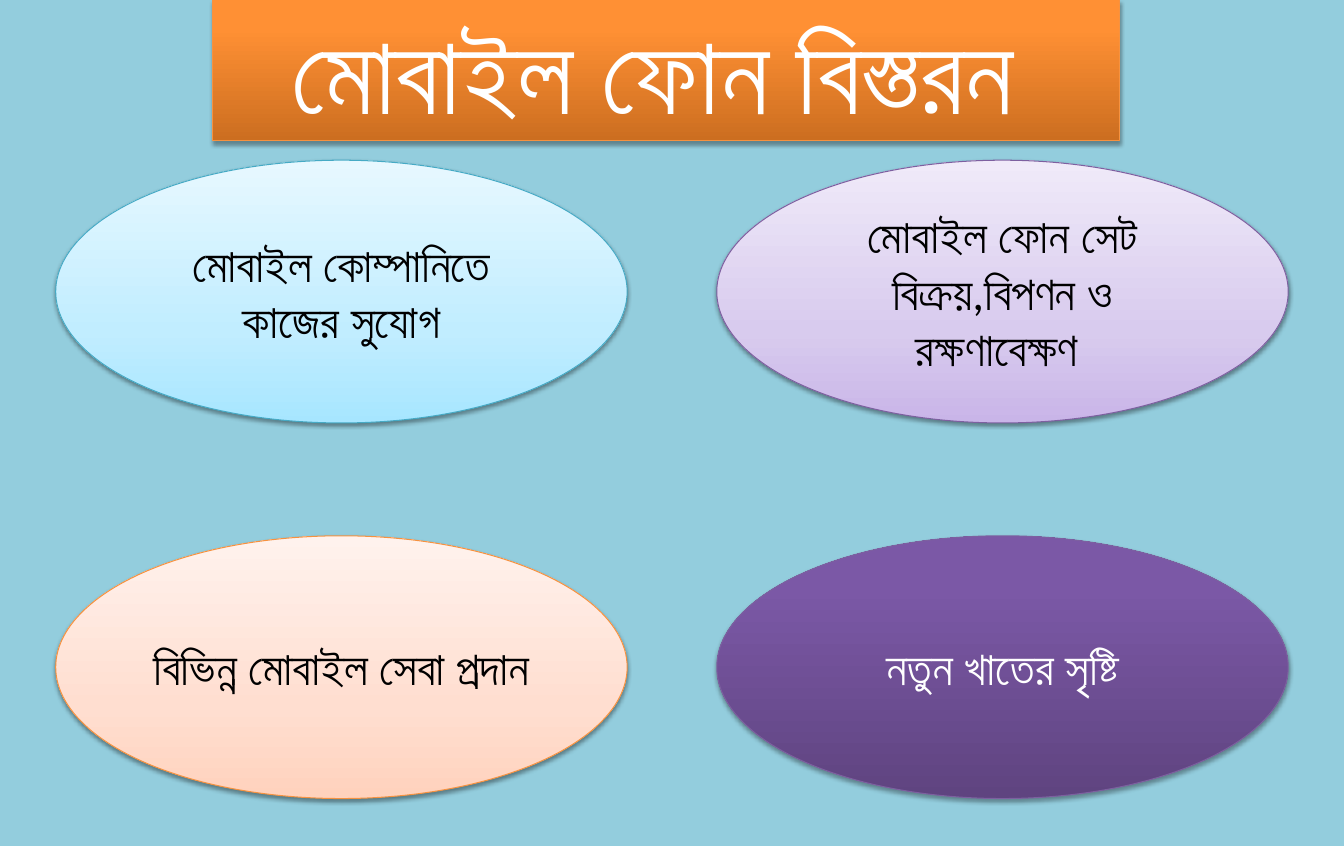
from lxml import etree
from pptx import Presentation
from pptx.dml.color import RGBColor
from pptx.enum import shapes, text
from pptx.oxml import ns
from pptx.util import Pt

BLACK, WHITE = "000000", "FFFFFF"
PALE_SHADOW = (38, 1.6)
DEEP_SHADOW = (35, 1.8)
PALE_STOPS = (0, 35, 100)
DEEP_STOPS = (0, 80, 100)
OVAL_LEFTS = (40.3, 518.4)
OVAL_TOPS = (115.9, 387.6)
OVAL_SIZE = (413.3, 190.1)

BENEFITS = [
    ("মোবাইল কোম্পানিতে কাজের সুযোগ", BLACK, "46AAC5",
     PALE_STOPS, ("A7E6FF", "C1EDFF", "E7F8FF"), PALE_SHADOW),
    ("মোবাইল ফোন সেট বিক্রয়,বিপণন ও রক্ষণাবেক্ষণ ", BLACK, "7D60A0",
     PALE_STOPS, ("C9B5E8", "D8CBEE", "F0EAF9"), PALE_SHADOW),
    ("বিভিন্ন মোবাইল সেবা প্রদান", BLACK, "F69240",
     PALE_STOPS, ("FFD2BD", "FFDED0", "FFF2ED"), PALE_SHADOW),
    ("নতুন খাতের সৃষ্টি", WHITE, "7D60A0",
     DEEP_STOPS, ("5F4480", "7B58A6", "7C57A8"), DEEP_SHADOW),
]


def colour(value):
    return RGBColor.from_string(value)


def add_element(parent, tag, **attributes):
    values = {name: str(value) for name, value in attributes.items()}
    return etree.SubElement(parent, ns.qn(tag), values)


def fill_gradient(shape, positions, colours):
    shape.fill.gradient()
    shape.fill.gradient_angle = 90
    stops = shape.element.spPr.find(ns.qn("a:gradFill")).find(ns.qn("a:gsLst"))
    stops.clear()
    for position, value in zip(positions, colours):
        stop = add_element(stops, "a:gs", pos=position * 1000)
        add_element(stop, "a:srgbClr", val=value)


def cast_shadow(shape, opacity, distance):
    shape.shadow.inherit = False
    effects = shape.element.spPr.find(ns.qn("a:effectLst"))
    shadow = add_element(effects, "a:outerShdw", blurRad=Pt(3.1), dist=Pt(distance),
                         dir=5400000, rotWithShape=0)
    tint = add_element(shadow, "a:srgbClr", val=BLACK)
    add_element(tint, "a:alpha", val=opacity * 1000)


def write_label(shape, wording, size, ink):
    frame = shape.text_frame
    frame.word_wrap = True
    frame.vertical_anchor = text.MSO_ANCHOR.MIDDLE
    frame.margin_left = frame.margin_right = Pt(8.6)
    frame.margin_top = frame.margin_bottom = Pt(4.3)
    paragraph = frame.paragraphs[0]
    paragraph.alignment = text.PP_ALIGN.CENTER
    run = paragraph.add_run()
    run.text = wording
    run.font.name = "Calibri"
    run.font.size = Pt(size)
    run.font.color.rgb = colour(ink)


def add_panel(slide, kind, box, size, content):
    wording, ink, outline, positions, colours, shadow = content
    panel = slide.shapes.add_shape(kind, *map(Pt, box))
    fill_gradient(panel, positions, colours)
    panel.line.color.rgb = colour(outline)
    panel.line.width = Pt(0.75)
    cast_shadow(panel, *shadow)
    write_label(panel, wording, size, ink)


def main():
    deck = Presentation()
    deck.slide_width, deck.slide_height = Pt(972), Pt(612)
    slide = deck.slides.add_slide(deck.slide_layouts[6])
    slide.background.fill.solid()
    slide.background.fill.fore_color.rgb = colour("93CDDD")

    heading = ("মোবাইল ফোন বিস্তরন ", WHITE, "F69240",
               DEEP_STOPS, ("CC6E20", "FF9034", "FF9136"), DEEP_SHADOW)
    add_panel(slide, shapes.MSO_SHAPE.RECTANGLE, (154, 0, 656, 102), 80, heading)

    for index, benefit in enumerate(BENEFITS):
        row, column = divmod(index, 2)
        box = (OVAL_LEFTS[column], OVAL_TOPS[row], *OVAL_SIZE)
        add_panel(slide, shapes.MSO_SHAPE.OVAL, box, 34, benefit)

    deck.save("out.pptx")


if __name__ == "__main__":
    main()
